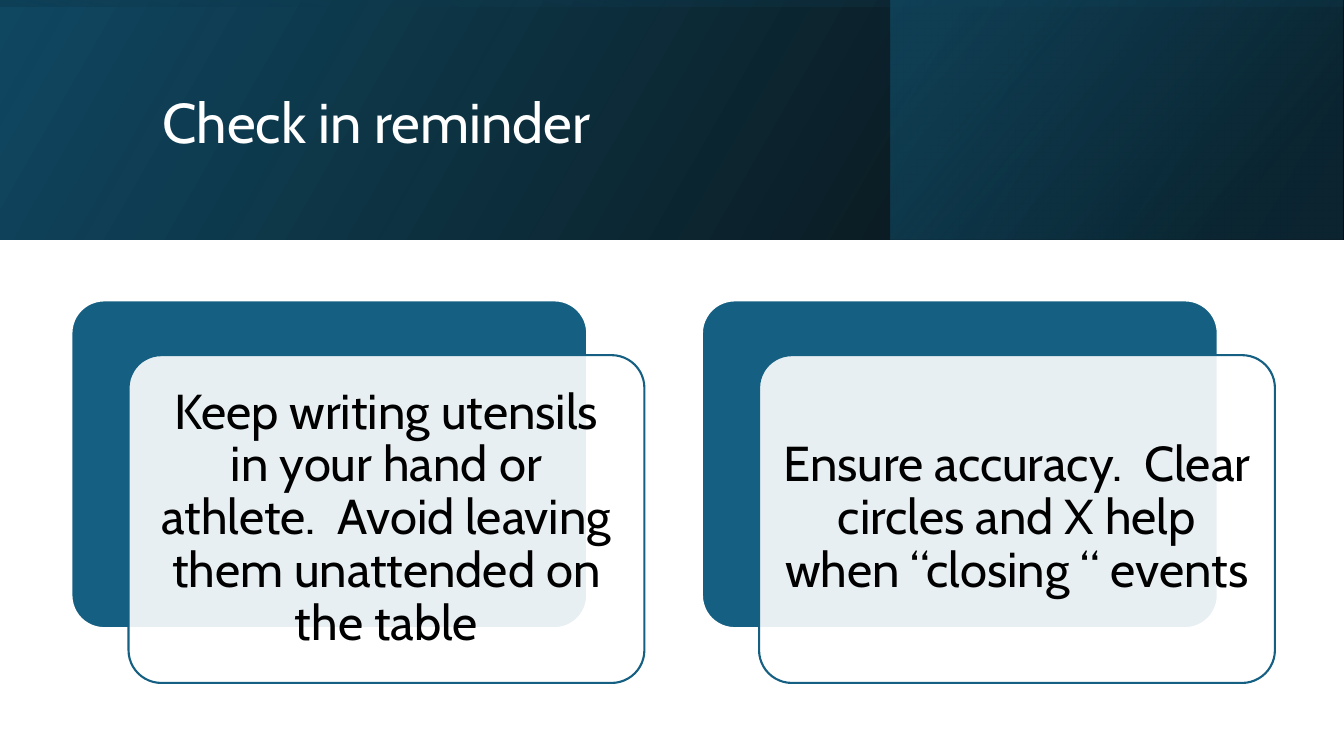
"""Build the check-in reminder slide with a shaded header and two cards."""
from dataclasses import dataclass

from lxml.etree import SubElement
from pptx import Presentation
from pptx.dml.color import RGBColor
from pptx.enum.shapes import MSO_SHAPE as Kind
from pptx.enum.text import MSO_ANCHOR as Anchor, PP_ALIGN as Align
from pptx.oxml.ns import qn
from pptx.shapes.autoshape import Shape
from pptx.slide import Slide
from pptx.util import Cm, Pt

WIDE, HIGH, HEAD = 33.87, 19.05, 6.03
BLUE, WHITE, BLACK = "156082", "FFFFFF", "000000"
INSET = Cm(0.33)


@dataclass
class Stop:
    place: float
    color: str
    alpha: int


@dataclass
class Band:
    left: float
    top: float
    width: float
    height: float
    angle: int
    stops: tuple[Stop, Stop]
    turn: int = 0


@dataclass
class Card:
    left: float
    text: str


BANDS = (
    Band(0, 0, WIDE, HEAD, 30,
         (Stop(0, BLACK, 96), Stop(1, "104862", 100))),
    Band(22.45, 0, 11.38, HEAD, 40,
         (Stop(0.19, "0B3041", 68), Stop(1, BLUE, 48))),
    Band((WIDE - HEAD) / 2, (HEAD - WIDE) / 2, HEAD, WIDE, 10,
         (Stop(0.23, "104862", 16), Stop(0.99, BLACK, 45)), 270),
)
CARDS = (
    Card(1.8, "Keep writing utensils in your hand or athlete.  "
              "Avoid leaving them unattended on the table"),
    Card(17.69, "Ensure accuracy.  Clear circles and X help "
                "when “closing “ events"),
)


def tint(code: str) -> RGBColor:
    """Turn a hex string into a colour."""
    return RGBColor.from_string(code)


def apply(item: object, looks: dict) -> None:
    """Set each named value on an item."""
    for name, value in looks.items():
        setattr(item, name, value)


def fade(shape: Shape, alphas: list[int]) -> None:
    """Give the fill colours of a shape their opacity in percent."""
    for color, alpha in zip(shape.element.spPr.iter(qn("a:srgbClr")), alphas):
        SubElement(color, qn("a:alpha")).set("val", str(alpha * 1000))


def write(shape: Shape, text: str, size: int, color: str, align: Align) -> None:
    """Put one styled paragraph in a shape."""
    frame = shape.text_frame
    frame.text = text
    apply(frame, {"word_wrap": True, "vertical_anchor": Anchor.MIDDLE})
    para = frame.paragraphs[0]
    apply(para, {"alignment": align, "line_spacing": 0.9})
    font = para.runs[0].font
    apply(font, {"name": "Cabin", "size": Pt(size)})
    font.color.rgb = tint(color)


def draw_band(slide: Slide, band: Band) -> None:
    """Draw one mirrored gradient rectangle of the header."""
    box = map(Cm, (band.left, band.top, band.width, band.height))
    shape = slide.shapes.add_shape(Kind.RECTANGLE, *box)
    shape.shadow.inherit = False
    shape.rotation = band.turn
    shape.element.spPr.xfrm.set("flipH", "1")
    shape.line.fill.background()
    shape.fill.gradient()
    shape.fill.gradient_angle = band.angle
    for slot, stop in zip(shape.fill.gradient_stops, band.stops):
        slot.position = stop.place
        slot.color.rgb = tint(stop.color)
    fade(shape, [stop.alpha for stop in band.stops])


def draw_panel(slide: Slide, left: float, top: float, fill: str, edge: str) -> Shape:
    """Draw one rounded panel of a card."""
    box = map(Cm, (left, top, 13, 8.26))
    shape = slide.shapes.add_shape(Kind.ROUNDED_RECTANGLE, *box)
    shape.adjustments[0] = 0.1
    shape.shadow.inherit = False
    shape.fill.solid()
    shape.fill.fore_color.rgb = tint(fill)
    shape.line.color.rgb = tint(edge)
    shape.line.width = Pt(1.5)
    return shape


def draw_card(slide: Slide, card: Card) -> None:
    """Draw a back panel and the text panel over it."""
    draw_panel(slide, card.left, 7.57, BLUE, WHITE)
    front = draw_panel(slide, card.left + 1.44, 8.95, WHITE, BLUE)
    fade(front, [90])
    sides = ("left", "top", "right", "bottom")
    apply(front.text_frame, {f"margin_{side}": INSET for side in sides})
    write(front, card.text, 35, BLACK, Align.CENTER)


def main() -> None:
    """Build and save the slide."""
    deck = Presentation()
    apply(deck, {"slide_width": Cm(WIDE), "slide_height": Cm(HIGH)})
    slide = deck.slides.add_slide(deck.slide_layouts[5])
    for band in BANDS:
        draw_band(slide, band)
    title = slide.shapes.title
    title.element.getparent().append(title.element)
    apply(title, {"left": Cm(3.84), "top": Cm(0.97),
                  "width": Cm(27), "height": Cm(4.37)})
    write(title, "Check in reminder", 40, WHITE, Align.LEFT)
    for card in CARDS:
        draw_card(slide, card)
    deck.save("out.pptx")


if __name__ == "__main__":
    main()
